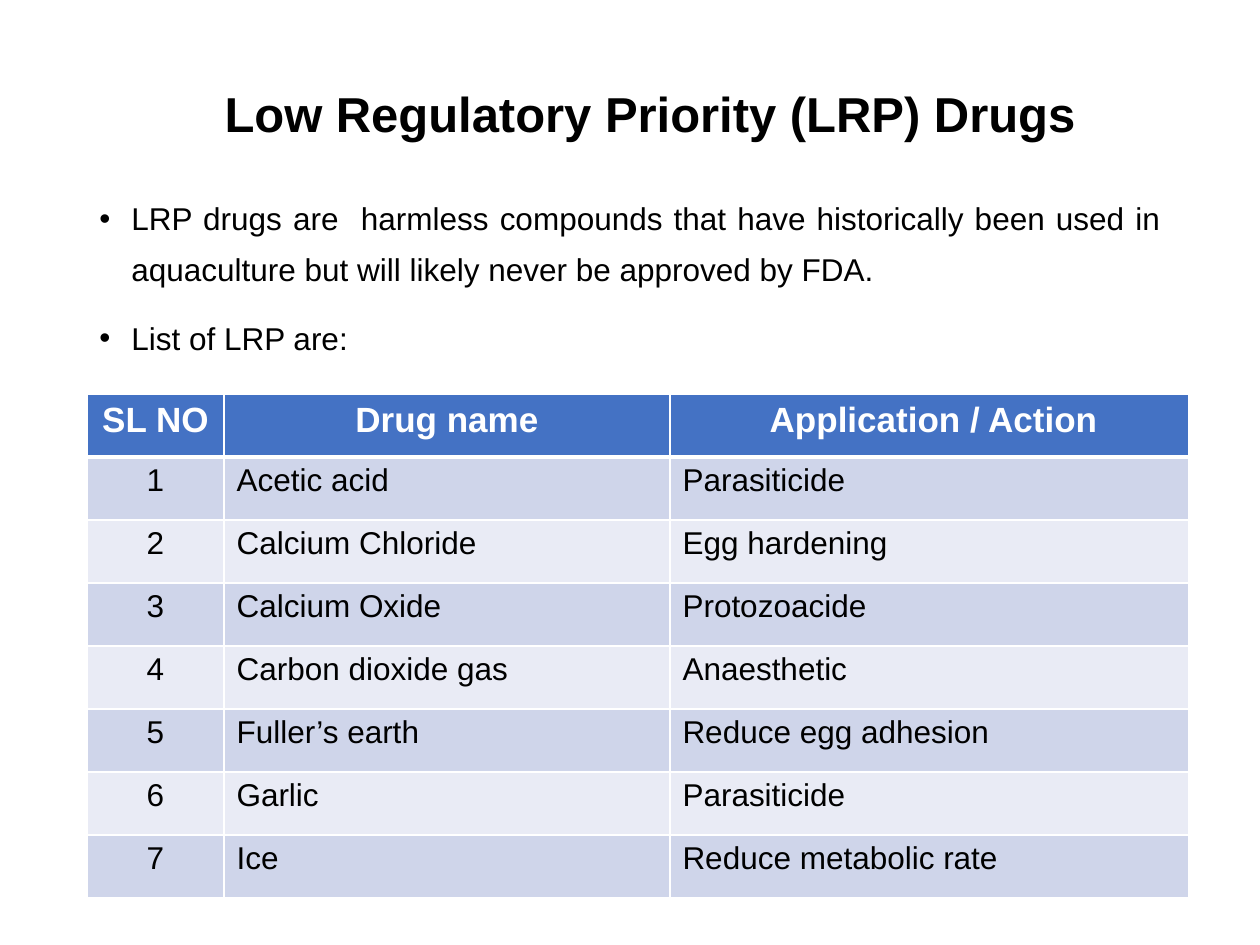
from dataclasses import dataclass

from lxml import etree
from pptx import Presentation
from pptx import util as u
from pptx.dml.color import RGBColor
from pptx.enum import text
from pptx.oxml import ns

PX_PER_INCH = 126
FONT = "Arial"
COLORS = {
    "ink": "000000",
    "white": "FFFFFF",
    "header": "4472C4",
    "odd_row": "CFD5EA",
    "even_row": "E9EBF5",
}
CENTER = text.PP_ALIGN.CENTER
JUSTIFY = text.PP_ALIGN.JUSTIFY


@dataclass
class Box:
    left: int
    top: int
    width: int
    height: int


@dataclass
class Style:
    size: int
    color: str = "ink"
    bold: bool = False


@dataclass
class Drug:
    name: str
    action: str


TITLE = "Low Regulatory Priority (LRP) Drugs"
BULLETS = [
    "LRP drugs are  harmless compounds that have historically been used in "
    "aquaculture but will likely never be approved by FDA.",
    "List of LRP are:",
]
HEADINGS = ["SL NO", "Drug name", " Application / Action"]
DRUGS = [
    Drug("Acetic acid", "Parasiticide"),
    Drug("Calcium Chloride", "Egg hardening"),
    Drug("Calcium Oxide", "Protozoacide"),
    Drug("Carbon dioxide gas", "Anaesthetic"),
    Drug("Fuller’s earth", "Reduce egg adhesion"),
    Drug("Garlic", "Parasiticide"),
    Drug("Ice", "Reduce metabolic rate"),
]
COLUMN_WIDTHS = [137, 446, 519]
ROW_HEIGHT = 63


def px(length: int) -> u.Emu:
    return u.Emu(round(length * u.Inches(1) / PX_PER_INCH))


def place(box: Box) -> list:
    return [px(side) for side in (box.left, box.top, box.width, box.height)]


def write(para, words: str, style: Style, **layout) -> None:
    """Fill a paragraph with one span and set its paragraph format."""
    for name, value in layout.items():
        setattr(para, name, value)
    span = para.add_run()
    span.text = words
    font = {"name": FONT, "size": u.Pt(style.size), "bold": style.bold}
    for name, value in font.items():
        setattr(span.font, name, value)
    span.font.color.rgb = RGBColor.from_string(COLORS[style.color])


def add_frame(page, box: Box):
    frame = page.shapes.add_textbox(*place(box)).text_frame
    frame.word_wrap = True
    return frame


def add_bullet(para, indent: int) -> None:
    properties = para._p.get_or_add_pPr()
    properties.set("marL", str(px(indent)))
    properties.set("indent", str(-px(indent)))
    etree.SubElement(properties, ns.qn("a:buFont"), typeface=FONT)
    etree.SubElement(properties, ns.qn("a:buChar"), char="•")


def set_borders(cell, widths: dict) -> None:
    properties = cell._tc.get_or_add_tcPr()
    for side, points in widths.items():
        line = etree.SubElement(properties, ns.qn(f"a:ln{side}"), w=str(u.Pt(points)))
        fill = etree.SubElement(line, ns.qn("a:solidFill"))
        etree.SubElement(fill, ns.qn("a:srgbClr"), val=COLORS["white"])


def add_drug_table(page, box: Box) -> None:
    rows = [HEADINGS]
    rows += [[str(i), drug.name, drug.action] for i, drug in enumerate(DRUGS, 1)]
    table = page.shapes.add_table(len(rows), len(HEADINGS), *place(box)).table
    for column, width in zip(table.columns, COLUMN_WIDTHS):
        column.width = px(width)
    for r, words in enumerate(rows):
        table.rows[r].height = px(ROW_HEIGHT)
        is_header = r == 0
        style = Style(20, "white", True) if is_header else Style(18)
        fill = "header" if is_header else "odd_row" if r % 2 else "even_row"
        # The rule under the header is thicker than the others
        borders = {"L": 1, "R": 1, "T": 3 if r == 1 else 1, "B": 3 if is_header else 1}
        for c, value in enumerate(words):
            cell = table.cell(r, c)
            set_borders(cell, borders)
            cell.fill.solid()
            cell.fill.fore_color.rgb = RGBColor.from_string(COLORS[fill])
            alignment = CENTER if is_header or c == 0 else JUSTIFY
            write(cell.text_frame.paragraphs[0], value, style, alignment=alignment)


def main() -> None:
    deck = Presentation()
    deck.slide_width, deck.slide_height = u.Inches(10), u.Inches(7.5)
    page = deck.slides.add_slide(deck.slide_layouts[6])

    # Title
    title = add_frame(page, Box(204, 73, 892, 88))
    title.vertical_anchor = text.MSO_ANCHOR.MIDDLE
    write(title.paragraphs[0], TITLE, Style(28, bold=True),
          alignment=CENTER, line_spacing=0.9)

    # Introduction
    body = add_frame(page, Box(87, 180, 1086, 214))
    for i, words in enumerate(BULLETS):
        para = body.add_paragraph() if i else body.paragraphs[0]
        add_bullet(para, 32)
        write(para, words, Style(18), alignment=JUSTIFY, line_spacing=1.35,
              space_before=u.Pt(10 if i else 0))

    # Drug table
    table_height = ROW_HEIGHT * (len(DRUGS) + 1)
    add_drug_table(page, Box(87, 394, sum(COLUMN_WIDTHS), table_height))

    deck.save("out.pptx")


if __name__ == "__main__":
    main()
